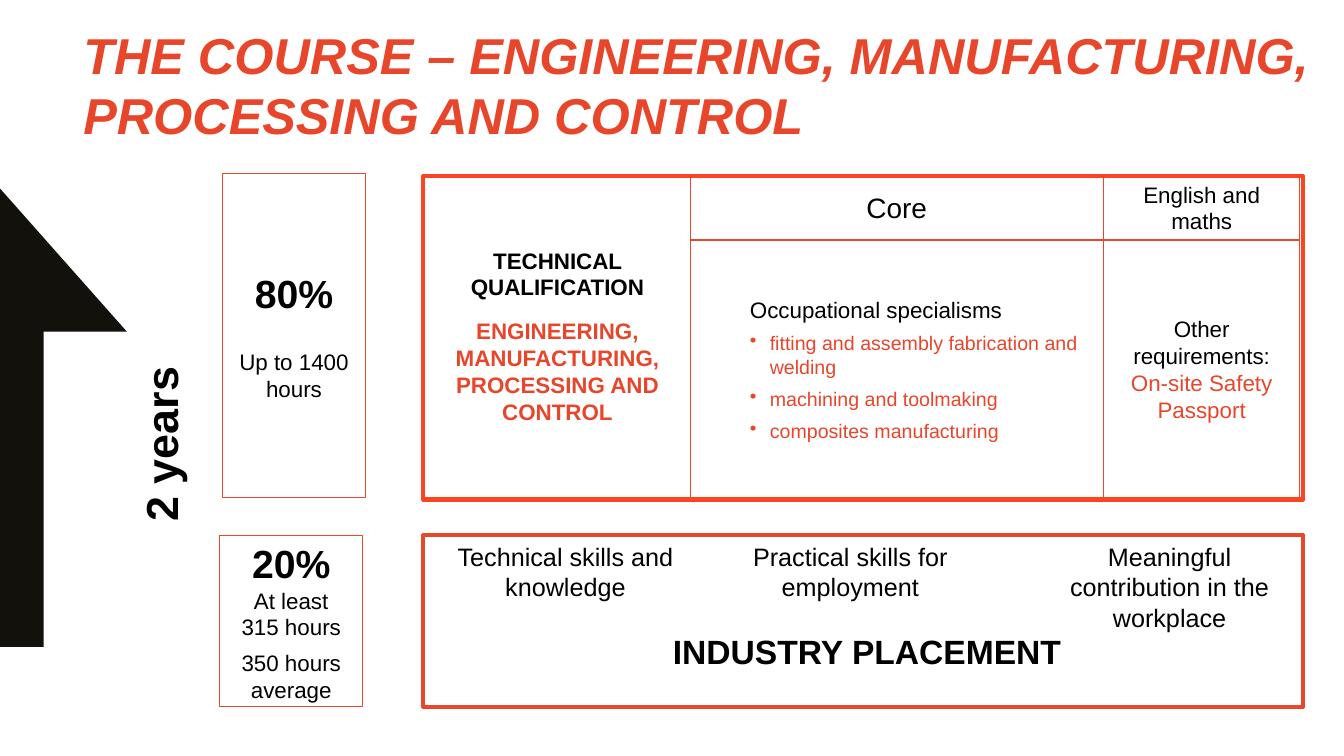
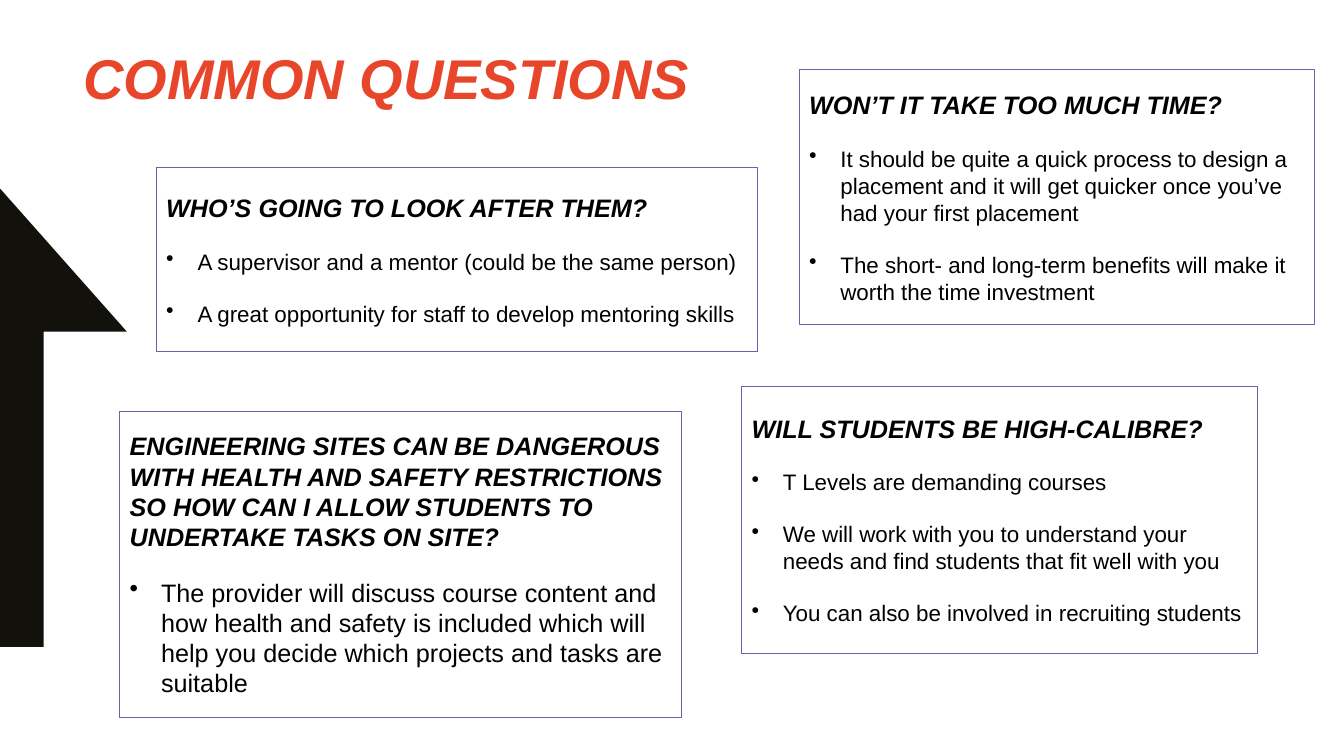
from lxml import etree
from pptx import Presentation
from pptx.dml.color import RGBColor
from pptx.enum import shapes, text
from pptx.oxml import ns
from pptx.util import Cm, Pt

RED = RGBColor(0xE8, 0x46, 0x2B)
EDGE = RGBColor(0xE8, 0x47, 0x2B)
FRAME = RGBColor(0xFC, 0x44, 0x21)
VIOLET = RGBColor(0x76, 0x5A, 0xB0)
DARK = RGBColor(0x12, 0x11, 0x0C)
BLACK = RGBColor(0, 0, 0)
WHITE = RGBColor(255, 255, 255)

LEFT, MID = text.PP_ALIGN.LEFT, text.PP_ALIGN.CENTER
ARROW = [(1.1, 8.36), (3.2, 8.36), (0, 4.75), (0, 16.3), (1.1, 16.3)]


class Deck:
    """Holds the shared style and the slide being filled."""

    font = "Arial"

    def __init__(self):
        self.prs = Presentation()
        self.prs.slide_width, self.prs.slide_height = Cm(33.87), Cm(19.05)
        self.slide = None

    def page(self, title, top, size):
        """Start a slide with the side arrow and its title."""
        self.slide = self.prs.slides.add_slide(self.prs.slide_layouts[6])
        pen = self.slide.shapes.build_freeform(
            Cm(ARROW[0][0]), Cm(ARROW[0][1]))
        pen.add_line_segments([(Cm(x), Cm(y)) for x, y in ARROW[1:]])
        arrow = pen.convert_to_shape()
        arrow.shadow.inherit = False
        arrow.fill.solid()
        arrow.fill.fore_color.rgb = DARK
        arrow.line.fill.background()
        head = self.label(1.85, top, 32, 3.6)
        self.para(head, title, size, RED, bold=True, slant=True, align=LEFT)

    def box(self, x, y, w, h, edge=EDGE, width=0.75, fill=None):
        """Add a rectangle and return its text frame."""
        rect = self.slide.shapes.add_shape(
            shapes.MSO_SHAPE.RECTANGLE, Cm(x), Cm(y), Cm(w), Cm(h))
        rect.shadow.inherit = False
        if fill is None:
            rect.fill.background()
        else:
            rect.fill.solid()
            rect.fill.fore_color.rgb = fill
        if edge is None:
            rect.line.fill.background()
        else:
            rect.line.color.rgb = edge
            rect.line.width = Pt(width)
        return self.wrap(rect, text.MSO_ANCHOR.MIDDLE)

    def label(self, x, y, w, h, anchor=text.MSO_ANCHOR.TOP, turn=0):
        """Add a plain text box and return its text frame."""
        note = self.slide.shapes.add_textbox(Cm(x), Cm(y), Cm(w), Cm(h))
        note.rotation = turn
        return self.wrap(note, anchor)

    def wrap(self, shape, anchor):
        frame = shape.text_frame
        frame.word_wrap = True
        frame.vertical_anchor = anchor
        return frame

    def para(self, frame, words, size, color=BLACK, bold=False, slant=False,
             align=MID, gap=0, left=0, hang=0, dot=False):
        """Write the next paragraph; gap is the space above it in points."""
        par = frame.paragraphs[0]
        if par.runs:
            par = frame.add_paragraph()
            par.space_before = Pt(gap)
        par.alignment = align
        if left:
            props = par._p.get_or_add_pPr()
            props.set("marL", str(Cm(left)))
            props.set("indent", str(-Cm(hang)))
            if dot:
                etree.SubElement(props, ns.qn("a:buChar")).set("char", "•")
        par.font.size = Pt(size)
        self.run(par, words, size, color, bold, slant)
        return par

    def run(self, par, words, size, color, bold=False, slant=False):
        run = par.add_run()
        run.text = words
        font = run.font
        font.name, font.size = self.font, Pt(size)
        font.bold, font.italic = bold, slant
        font.color.rgb = color

    def card(self, place, ask, replies, size=16):
        """Add a question with its bulleted replies."""
        frame = self.box(*place, edge=VIOLET)
        self.para(frame, ask, 18, bold=True, slant=True, align=LEFT)
        for reply in replies:
            self.para(frame, reply, size, align=LEFT, gap=18,
                      left=0.79, hang=0.79, dot=True)

    def save(self):
        self.prs.save("out.pptx")


def course(deck):
    deck.page("THE COURSE – ENGINEERING, MANUFACTURING, "
              "PROCESSING AND CONTROL", 0.48, 36)

    share = deck.box(5.61, 4.37, 3.6, 8.18)
    deck.para(share, "80%", 28, bold=True)
    deck.para(share, "Up to 1400 hours", 16, gap=23)
    share = deck.box(5.54, 13.49, 3.6, 4.32)
    deck.para(share, "20%", 28, bold=True)
    for words, gap in (("At least", 0), ("315 hours", 0),
                       ("350 hours average", 6)):
        deck.para(share, words, 16, gap=gap)
    years = deck.label(1.5, 10.59, 5.08, 1.2, text.MSO_ANCHOR.MIDDLE, 270)
    deck.para(years, "2 years", 32, bold=True)

    award = deck.label(10.67, 4.37, 6.76, 8.18, text.MSO_ANCHOR.MIDDLE)
    deck.para(award, "TECHNICAL QUALIFICATION", 16, bold=True)
    deck.para(award, "ENGINEERING, MANUFACTURING, PROCESSING AND CONTROL",
              16, RED, bold=True, gap=12)

    core, side = (17.4, 10.4), (27.81, 4.95)
    for (x, w), words, size in ((core, "Core", 20),
                                (side, "English and maths", 16)):
        deck.para(deck.box(x, 4.41, w, 1.64), words, size)
    jobs = deck.box(core[0], 6.05, core[1], 6.5)
    inset = dict(align=LEFT, gap=6, left=1.75, hang=0.5)
    deck.para(jobs, "Occupational specialisms", 16, **inset)
    for job in ("fitting and assembly fabrication and welding",
                "machining and toolmaking", "composites manufacturing"):
        deck.para(jobs, job, 14, RED, dot=True, **inset)
    needs = deck.box(side[0], 6.05, side[1], 6.5)
    par = deck.para(needs, "Other requirements: ", 16)
    deck.run(par, "On-site Safety Passport", 16, RED)
    deck.box(10.67, 4.44, 22.17, 8.15, FRAME, 3)

    work = deck.box(10.95, 15.95, 21.8, 0.9, edge=None, fill=WHITE)
    deck.para(work, "INDUSTRY PLACEMENT", 24, bold=True)
    deck.box(10.67, 13.49, 22.17, 4.32, width=3)
    for x, w, words in (
            (10.8, 6.9, "Technical skills and knowledge"),
            (17.93, 7, "Practical skills for employment"),
            (26.21, 6.53, "Meaningful contribution in the workplace")):
        deck.para(deck.label(x, 13.52, w, 2.1), words, 18)


def queries(deck):
    deck.page("COMMON QUESTIONS", 0.97, 40)
    deck.card((3.94, 4.22, 15.14, 4.65), "WHO’S GOING TO LOOK AFTER THEM?", [
        "A supervisor and a mentor (could be the same person)",
        "A great opportunity for staff to develop mentoring skills"])
    deck.card((20.14, 1.75, 13, 6.43), "WON’T IT TAKE TOO MUCH TIME?", [
        "It should be quite a quick process to design a placement and it "
        "will get quicker once you’ve had your first placement",
        "The short- and long-term benefits will make it worth the time "
        "investment"])
    deck.card((18.69, 9.73, 13, 6.73), "WILL STUDENTS BE HIGH-CALIBRE?", [
        "T Levels are demanding courses",
        "We will work with you to understand your needs and find students "
        "that fit well with you",
        "You can also be involved in recruiting students"])
    deck.card(
        (3.02, 10.36, 14.15, 7.72),
        "ENGINEERING SITES CAN BE DANGEROUS WITH HEALTH AND SAFETY "
        "RESTRICTIONS SO HOW CAN I ALLOW STUDENTS TO UNDERTAKE TASKS "
        "ON SITE?", [
            "The provider will discuss course content and how health and "
            "safety is included which will help you decide which projects "
            "and tasks are suitable"], size=18)


def main():
    deck = Deck()
    course(deck)
    queries(deck)
    deck.save()


if __name__ == "__main__":
    main()
